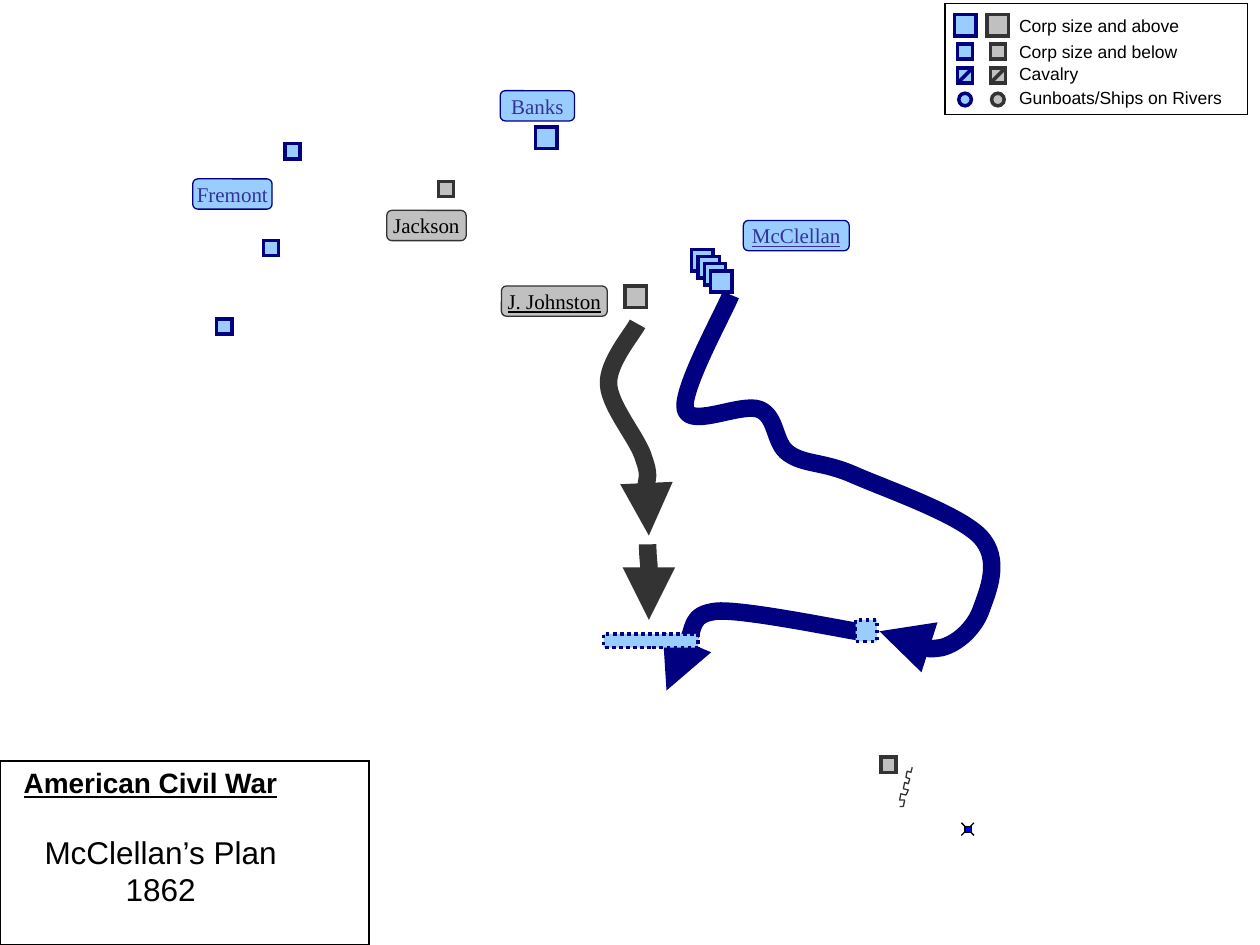
from lxml import etree
from pptx import Presentation
from pptx.dml.color import RGBColor
from pptx.enum.dml import MSO_LINE
from pptx.enum.shapes import MSO_CONNECTOR, MSO_SHAPE
from pptx.enum.text import MSO_ANCHOR, MSO_AUTO_SIZE, PP_ALIGN
from pptx.oxml.ns import qn
from pptx.util import Inches, Pt

LIGHT_BLUE, NAVY, INDIGO = "99CCFF", "000080", "333399"
GRAY, CHARCOAL = "C0C0C0", "333333"
BLACK, WHITE, BLUE = "000000", "FFFFFF", "0000FF"
UNION, CONFEDERATE = (LIGHT_BLUE, NAVY), (GRAY, CHARCOAL)  # fill, outline
CORPS, SMALL, BOAT = 0.17, 0.12, 0.1  # marker sizes in inches
THIN, MARKER, MARCH = 0.75, 2, 10  # line widths in points


def color(value):
    return RGBColor.from_string(value)


def set_line(shape, line_color, width):
    shape.line.fill.solid()
    shape.line.fill.fore_color.rgb = color(line_color)
    shape.line.width = Pt(width)


def add_line_detail(shape, tag, **attributes):
    """Append a line property that python-pptx has no method for."""
    etree.SubElement(shape.element.spPr.find(qn("a:ln")), qn(tag), **attributes)


def add_box(slide, left, top, width, height, fill, line_color, line_width=THIN,
            kind=MSO_SHAPE.RECTANGLE, dotted=False):
    shape = slide.shapes.add_shape(kind, Inches(left), Inches(top), Inches(width), Inches(height))
    shape.shadow.inherit = False
    shape.fill.solid()
    shape.fill.fore_color.rgb = color(fill)
    set_line(shape, line_color, line_width)
    if dotted:
        shape.line.dash_style = MSO_LINE.ROUND_DOT
    add_line_detail(shape, "a:miter", lim="800000")
    return shape


def add_unit(slide, left, top, size, side, **options):
    add_box(slide, left, top, size, size, *side, line_width=MARKER, **options)


def add_line(slide, start, end, line_color, width):
    points = [Inches(value) for value in (*start, *end)]
    line = slide.shapes.add_connector(MSO_CONNECTOR.STRAIGHT, *points)
    set_line(line, line_color, width)
    etree.SubElement(line.element.spPr, qn("a:effectLst"))


def write_text(frame, text, font="Arial", size=10, text_color=BLACK, bold=False,
               underline=False, align=PP_ALIGN.LEFT):
    frame.word_wrap = False
    for index, line in enumerate(text.split("\n")):
        paragraph = frame.paragraphs[0] if index == 0 else frame.add_paragraph()
        paragraph.alignment = align
        run = paragraph.add_run()
        run.text = line
        run.font.name, run.font.size = font, Pt(size)
        run.font.bold, run.font.underline = bold, underline
        run.font.color.rgb = color(text_color)


def add_text(slide, left, top, width, height, text, **text_format):
    box = slide.shapes.add_textbox(Inches(left), Inches(top), Inches(width), Inches(height))
    write_text(box.text_frame, text, **text_format)
    box.text_frame.auto_size = MSO_AUTO_SIZE.SHAPE_TO_FIT_TEXT


def add_commander(slide, name, left, top, width, side, underline=False):
    label = add_box(slide, left, top, width, 0.24, *side, kind=MSO_SHAPE.ROUNDED_RECTANGLE)
    label.text_frame.vertical_anchor = MSO_ANCHOR.MIDDLE
    write_text(label.text_frame, name, font="Times New Roman", size=12, underline=underline,
               text_color=INDIGO if side == UNION else BLACK, align=PP_ALIGN.CENTER)


def add_open_path(slide, points, line_color, width):
    start, *others = [(Inches(x), Inches(y)) for x, y in points]
    builder = slide.shapes.build_freeform(*start)
    builder.add_line_segments(others, close=False)
    shape = builder.convert_to_shape()
    shape.shadow.inherit = False
    shape.fill.background()
    set_line(shape, line_color, width)
    add_line_detail(shape, "a:round")
    return shape


def curve_segments(shape):
    """Turn each three straight segments of a freeform into one cubic curve."""
    segments = list(shape.element.iter(qn("a:lnTo")))
    for index in range(0, len(segments), 3):
        curve = etree.Element(qn("a:cubicBezTo"))
        segments[index].addprevious(curve)
        for segment in segments[index:index + 3]:
            curve.append(segment[0])
            segment.getparent().remove(segment)


def add_march(slide, points, line_color):
    """Draw a thick arrow through Bezier points: a start, then three per curve."""
    shape = add_open_path(slide, points, line_color, MARCH)
    curve_segments(shape)
    add_line_detail(shape, "a:tailEnd", type="triangle")


def add_legend(slide):
    add_box(slide, 7.5, 0.03, 2.4, 0.88, WHITE, BLACK)
    rows = [("Corp size and above", 0.07, 1.47, 0.2, CORPS),
            ("Corp size and below", 0.28, 1.45, 0.41, SMALL),
            ("Cavalry", 0.45, 0.67, 0.6, SMALL),
            ("Gunboats/Ships on Rivers", 0.64, 1.81, 0.79, BOAT)]
    for text, text_top, text_width, middle, size in rows:
        kind = MSO_SHAPE.OVAL if size == BOAT else MSO_SHAPE.RECTANGLE
        upper, lower = middle - size / 2, middle + size / 2
        for center, side in ((7.66, UNION), (7.92, CONFEDERATE)):
            left, right = center - size / 2, center + size / 2
            add_unit(slide, left, upper, size, side, kind=kind)
            if text == "Cavalry":
                add_line(slide, (right, upper), (left, lower), side[1], MARKER)
        add_text(slide, 7.99, text_top, text_width, 0.27, text)


def add_title(slide):
    add_box(slide, 0, 6.04, 2.93, 1.46, WHITE, BLACK)
    add_text(slide, 0.09, 6.03, 2.23, 0.37, "American Civil War", size=16, bold=True, underline=True)
    add_text(slide, 0.25, 6.56, 2.05, 0.7, "McClellan’s Plan\n1862", size=18, align=PP_ALIGN.CENTER)


def add_armies(slide):
    for step in range(4):  # McClellan's overlapping corps
        add_unit(slide, 5.49 + 0.05 * step, 1.98 + CORPS / 3 * step, CORPS, UNION)
    units = [(4.96, 2.27, CORPS, CONFEDERATE), (4.25, 1.01, CORPS, UNION),
             (1.72, 2.53, SMALL, UNION), (2.09, 1.91, SMALL, UNION), (2.26, 1.14, SMALL, UNION),
             (3.48, 1.44, SMALL, CONFEDERATE), (6.99, 6.01, SMALL, CONFEDERATE)]
    for left, top, size, side in units:
        add_unit(slide, left, top, size, side)
    commanders = [("McClellan", 5.9, 1.75, 0.84, UNION, True),
                  ("J. Johnston", 3.98, 2.27, 0.84, CONFEDERATE, True),
                  ("Banks", 3.97, 0.72, 0.59, UNION, False),
                  ("Fremont", 1.53, 1.42, 0.63, UNION, False),
                  ("Jackson", 3.07, 1.67, 0.63, CONFEDERATE, False)]
    for name, left, top, width, side, underline in commanders:
        add_commander(slide, name, left, top, width, side, underline)


def add_fort_and_trenches(slide):
    left, right, upper, lower = 7.63, 7.73, 6.53, 6.63
    add_line(slide, (left, lower), (right, upper), BLACK, THIN)
    add_line(slide, (right, lower), (left, upper), BLACK, THIN)
    add_box(slide, 7.66, 6.56, 0.05, 0.05, BLUE, BLACK)
    trenches = [(7.24, 6.09), (7.23, 6.13), (7.2, 6.12), (7.19, 6.17), (7.22, 6.18),
                (7.21, 6.22), (7.18, 6.21), (7.17, 6.26), (7.21, 6.27), (7.19, 6.31),
                (7.15, 6.3), (7.14, 6.35), (7.18, 6.35), (7.17, 6.4), (7.14, 6.4)]
    add_open_path(slide, trenches, CHARCOAL, THIN)


def add_marches(slide):
    voyage = [(5.8, 2.34), (5.74, 2.49), (5.4, 3.1), (5.44, 3.25),
              (5.48, 3.4), (5.89, 3.19), (6.03, 3.25), (6.17, 3.31), (6.14, 3.52), (6.26, 3.6),
              (6.39, 3.69), (6.53, 3.66), (6.78, 3.77), (7.03, 3.88), (7.61, 4.08), (7.78, 4.26),
              (7.95, 4.44), (7.84, 4.69), (7.79, 4.83), (7.74, 4.98), (7.6, 5.11), (7.47, 5.14),
              (7.33, 5.16), (7.08, 5.04), (6.98, 5.01)]
    advance = [(6.85, 5.02), (6.66, 4.99), (5.93, 4.84), (5.7, 4.85),
               (5.46, 4.87), (5.52, 5), (5.45, 5.1), (5.38, 5.21), (5.32, 5.4), (5.29, 5.48)]
    retreat = [(5.06, 2.57), (5.02, 2.65), (4.82, 2.88), (4.83, 3.05),
               (4.84, 3.23), (5.07, 3.49), (5.11, 3.64), (5.16, 3.78), (5.12, 3.81), (5.13, 3.92),
               (5.13, 4.02), (5.14, 4.18), (5.15, 4.25)]
    last_stage = [(5.14, 4.32), (5.14, 4.35), (5.14, 4.39), (5.15, 4.49),
                  (5.15, 4.59), (5.15, 4.85), (5.15, 4.92)]
    for points, line_color in ((voyage, NAVY), (advance, NAVY),
                               (retreat, CHARCOAL), (last_stage, CHARCOAL)):
        add_march(slide, points, line_color)


def add_planned_positions(slide):
    add_box(slide, 4.79, 5.03, 0.75, 0.11, *UNION, line_width=MARKER, dotted=True)
    add_unit(slide, 6.79, 4.92, CORPS, UNION, dotted=True)


def main():
    presentation = Presentation()
    presentation.slide_width, presentation.slide_height = Inches(10), Inches(7.5)
    slide = presentation.slides.add_slide(presentation.slide_layouts[6])
    add_legend(slide)
    add_title(slide)
    add_armies(slide)
    add_fort_and_trenches(slide)
    add_marches(slide)
    add_planned_positions(slide)
    presentation.save("out.pptx")


if __name__ == "__main__":
    main()
